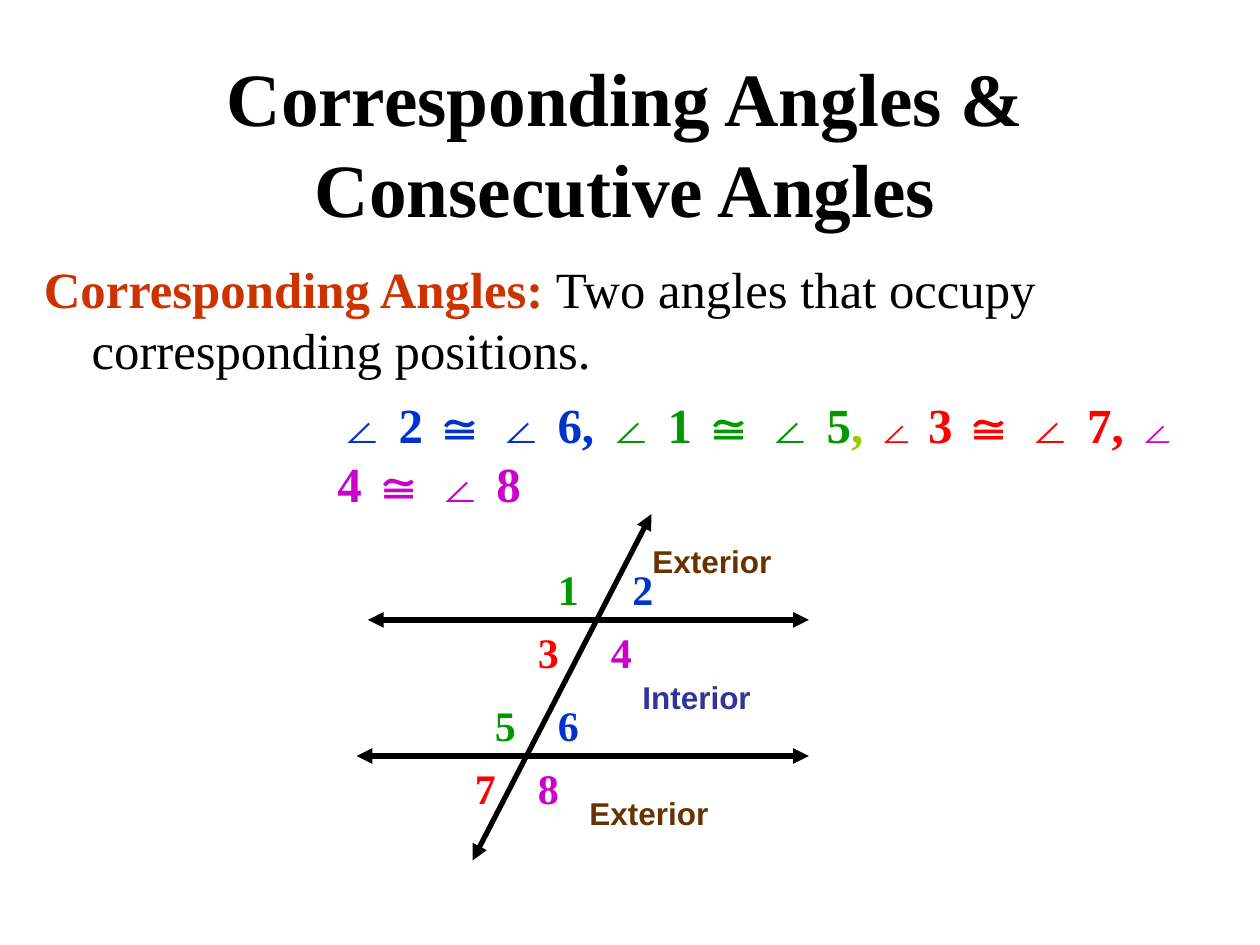
from lxml import etree
from pptx import Presentation
from pptx import util as u
from pptx.dml.color import RGBColor
from pptx.enum import shapes, text
from pptx.oxml.ns import qn

COLORS = {
    "black": "000000", "rust": "CC3300", "blue": "0033CC", "green": "009900",
    "lime": "99CC00", "red": "FF0000", "magenta": "CC00CC",
    "indigo": "333399", "brown": "663300",
}
SERIF, SANS = "Times New Roman", "Arial"
ANGLE_COLORS = ["green", "blue", "red", "magenta"]
ANGLE_BOXES = [
    (4.33, 4.42, 0.42), (4.92, 4.42, 0.42), (4.17, 4.92, 0.42), (4.75, 4.92, 0.33),
    (3.83, 5.5, 0.42), (4.33, 5.5, 0.42), (3.67, 6, 0.33), (4.17, 6, 0.25),
]
REGIONS = [
    ("Interior", "indigo", 5, 5.33, 2),
    ("Exterior", "brown", 4.58, 6.25, 1.58),
    ("Exterior", "brown", 5.08, 4.25, 1.58),
]
LINES = [(2.92, 4.92, 6.42, 4.92), (2.83, 6, 6.42, 6), (5.17, 4.08, 3.75, 6.83)]
CONGRUENCES = [
    ("∠ 2 ≅ ∠ 6, ", 28, "blue"), ("∠ 1 ≅ ∠ 5", 28, "green"), (", ", 28, "lime"),
    ("∠ ", 24, "red"), ("3 ≅ ∠ 7, ", 28, "red"),
    ("∠ ", 24, "magenta"), ("4 ≅ ∠ 8", 28, "magenta"),
]


def add_text(slide, left, top, width, height, spans, font=SERIF):
    """Add a wrapped text box of (wording, size, colour, bold) spans."""
    box = slide.shapes.add_textbox(*map(u.Inches, (left, top, width, height)))
    box.text_frame.word_wrap = True
    para = box.text_frame.paragraphs[0]
    for wording, size, color, bold in spans:
        span = para.add_run()
        span.text = wording
        span.font.name = font
        span.font.size = u.Pt(size)
        span.font.bold = bold
        span.font.color.rgb = RGBColor.from_string(COLORS[color])
    return box


def add_title(slide):
    """Add the centred heading."""
    spans = [("Corresponding Angles & Consecutive Angles", 43, "black", True)]
    box = add_text(slide, 0.25, 0.75, 9.42, 0.75, spans)
    box.text_frame.vertical_anchor = text.MSO_ANCHOR.MIDDLE
    box.text_frame.paragraphs[0].alignment = text.PP_ALIGN.CENTER


def add_definition(slide):
    """Add the definition with a hanging indent."""
    spans = [
        ("Corresponding Angles:", 29, "rust", True),
        (" Two angles that occupy corresponding positions.", 29, "black", False),
    ]
    box = add_text(slide, 0.25, 2, 9.5, 4.58, spans)
    para = box.text_frame.paragraphs[0]
    para.space_before = u.Pt(6)
    properties = para._p.get_or_add_pPr()
    properties.set("marL", str(u.Inches(0.38)))
    properties.set("indent", str(u.Inches(-0.38)))


def add_arrow(slide, *ends):
    """Add a black line with an arrowhead at each end."""
    line = slide.shapes.add_connector(
        shapes.MSO_CONNECTOR.STRAIGHT, *map(u.Inches, ends))
    line.line.width = u.Pt(3)
    line.line.color.rgb = RGBColor.from_string(COLORS["black"])
    outline = line.line._get_or_add_ln()
    for end in ("a:headEnd", "a:tailEnd"):
        etree.SubElement(outline, qn(end), type="triangle")
    etree.SubElement(line._element.spPr, qn("a:effectLst"))


def main():
    """Build and save the slide on corresponding angles."""
    deck = Presentation()
    deck.slide_width, deck.slide_height = u.Inches(10), u.Inches(7.5)
    slide = deck.slides.add_slide(deck.slide_layouts[6])
    add_title(slide)
    add_definition(slide)
    add_text(slide, 2.58, 3.08, 7.08, 0.57, [(*span, True) for span in CONGRUENCES])
    for ends in LINES:
        add_arrow(slide, *ends)
    for index, (left, top, width) in enumerate(ANGLE_BOXES):
        color = ANGLE_COLORS[index % len(ANGLE_COLORS)]
        add_text(slide, left, top, width, 0.5, [(str(index + 1), 24, color, True)])
    for name, color, left, top, width in REGIONS:
        add_text(slide, left, top, width, 0.4, [(name, 18, color, True)], SANS)
    deck.save("out.pptx")


if __name__ == "__main__":
    main()
